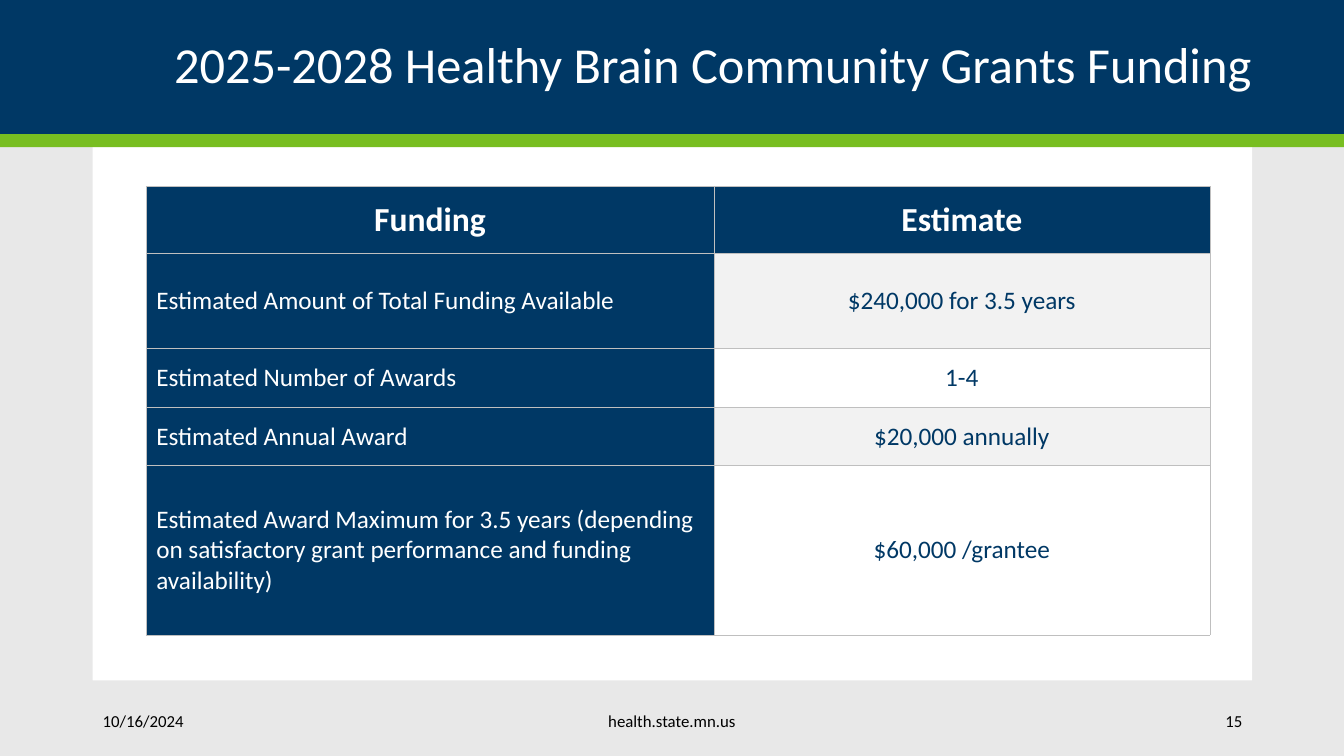
from typing import NamedTuple

import pptx
import pptx.dml.color
import pptx.enum.shapes
import pptx.enum.text
import pptx.oxml
import pptx.oxml.ns
import pptx.util
from pptx.dml.color import RGBColor
from pptx.enum.text import PP_ALIGN
from pptx.util import Inches

NAVY = RGBColor(0x00, 0x38, 0x65)
GREEN = RGBColor(0x78, 0xBE, 0x21)
WHITE = RGBColor(0xFF, 0xFF, 0xFF)
BLACK = RGBColor(0x00, 0x00, 0x00)
PALE_GRAY = RGBColor(0xF2, 0xF2, 0xF2)
BACKGROUND_GRAY = RGBColor(0xE8, 0xE8, 0xE8)
BORDER_GRAY = RGBColor(0xBF, 0xBF, 0xBF)
FONT = "Calibri"


class Panel(NamedTuple):
    left: float
    top: float
    width: float
    height: float
    color: RGBColor


class Label(NamedTuple):
    text: str
    left: float
    top: float
    width: float
    height: float
    alignment: PP_ALIGN
    size: int = 12
    color: RGBColor = BLACK
    side_inset: float = 0.1
    line_spacing: float = 1.0


class FundingRow(NamedTuple):
    item: str
    estimate: str
    height: float


PANELS = [
    Panel(0, 0, 13.33, 1.33, NAVY),
    Panel(0.92, 1.46, 11.5, 5.29, WHITE),
    Panel(0, 1.33, 13.33, 0.13, GREEN),
]
LABELS = [
    Label("2025-2028 Healthy Brain Community Grants Funding", 0.92, 0, 11.5, 1.33,
          PP_ALIGN.RIGHT, 36, WHITE, 0, 0.9),
    Label("10/16/2024", 0.92, 6.95, 1.49, 0.4, PP_ALIGN.LEFT),
    Label("health.state.mn.us", 3.61, 6.95, 6.11, 0.4, PP_ALIGN.CENTER),
    Label("15", 10.82, 6.95, 1.6, 0.4, PP_ALIGN.RIGHT),
]
COLUMN_WIDTHS = [5.63, 4.92]
FUNDING_ROWS = [
    FundingRow("Funding", "Estimate", 0.66),
    FundingRow("Estimated Amount of Total Funding Available", "$240,000 for 3.5 years", 0.95),
    FundingRow("Estimated Number of Awards", "1-4", 0.58),
    FundingRow("Estimated Annual Award", "$20,000 annually", 0.58),
    FundingRow("Estimated Award Maximum for 3.5 years (depending on satisfactory grant "
               "performance and funding availability)", "$60,000 /grantee", 1.68),
]


def style_paragraph(paragraph, alignment: PP_ALIGN, size: int, color: RGBColor,
                    bold: bool = False) -> None:
    paragraph.alignment = alignment
    paragraph.font.name = FONT
    paragraph.font.size = pptx.util.Pt(size)
    paragraph.font.bold = bold
    paragraph.font.color.rgb = color


def add_panel(slide, panel: Panel) -> None:
    shape = slide.shapes.add_shape(
        pptx.enum.shapes.MSO_SHAPE.RECTANGLE, Inches(panel.left), Inches(panel.top),
        Inches(panel.width), Inches(panel.height))
    shape.shadow.inherit = False
    shape.fill.solid()
    shape.fill.fore_color.rgb = panel.color
    shape.line.fill.background()


def add_label(slide, label: Label) -> None:
    text_box = slide.shapes.add_textbox(
        Inches(label.left), Inches(label.top), Inches(label.width), Inches(label.height))
    text_frame = text_box.text_frame
    text_frame.word_wrap = True
    text_frame.vertical_anchor = pptx.enum.text.MSO_ANCHOR.MIDDLE
    text_frame.margin_left = text_frame.margin_right = Inches(label.side_inset)
    paragraph = text_frame.paragraphs[0]
    paragraph.text = label.text
    paragraph.line_spacing = label.line_spacing
    style_paragraph(paragraph, label.alignment, label.size, label.color)


def add_borders(cell) -> None:
    properties = cell._tc.get_or_add_tcPr()
    # Border lines come before the fill in a cell's properties
    for position, side in enumerate(("lnL", "lnR", "lnT", "lnB")):
        border = pptx.oxml.parse_xml(
            f'<a:{side} {pptx.oxml.ns.nsdecls("a")} w="6350"><a:solidFill>'
            f'<a:srgbClr val="{BORDER_GRAY}"/></a:solidFill></a:{side}>')
        properties.insert(position, border)


def fill_cell(cell, text: str, fill: RGBColor, alignment: PP_ALIGN, size: int,
              color: RGBColor, bold: bool) -> None:
    cell.text = text
    cell.vertical_anchor = pptx.enum.text.MSO_ANCHOR.MIDDLE
    cell.fill.solid()
    cell.fill.fore_color.rgb = fill
    style_paragraph(cell.text_frame.paragraphs[0], alignment, size, color, bold)
    add_borders(cell)


def add_funding_table(slide, left: float, top: float) -> None:
    frame = slide.shapes.add_table(
        len(FUNDING_ROWS), len(COLUMN_WIDTHS), Inches(left), Inches(top),
        Inches(sum(COLUMN_WIDTHS)), Inches(sum(row.height for row in FUNDING_ROWS)))
    table = frame.table
    for column, width in zip(table.columns, COLUMN_WIDTHS):
        column.width = Inches(width)
    for index, row in enumerate(FUNDING_ROWS):
        table.rows[index].height = Inches(row.height)
        is_header = index == 0
        size = 24 if is_header else 18
        item_alignment = PP_ALIGN.CENTER if is_header else PP_ALIGN.LEFT
        band = PALE_GRAY if index % 2 else WHITE
        fill, color = (NAVY, WHITE) if is_header else (band, NAVY)
        fill_cell(table.cell(index, 0), row.item, NAVY, item_alignment, size, WHITE, is_header)
        fill_cell(table.cell(index, 1), row.estimate, fill, PP_ALIGN.CENTER, size, color,
                  is_header)


def main() -> None:
    presentation = pptx.Presentation()
    presentation.slide_width = Inches(13.33)
    presentation.slide_height = Inches(7.5)
    slide = presentation.slides.add_slide(presentation.slide_layouts[6])

    # Background and panels
    slide.background.fill.solid()
    slide.background.fill.fore_color.rgb = BACKGROUND_GRAY
    for panel in PANELS:
        add_panel(slide, panel)

    # Title, footer and table
    for label in LABELS:
        add_label(slide, label)
    add_funding_table(slide, 1.45, 1.85)

    presentation.save("out.pptx")


if __name__ == "__main__":
    main()
